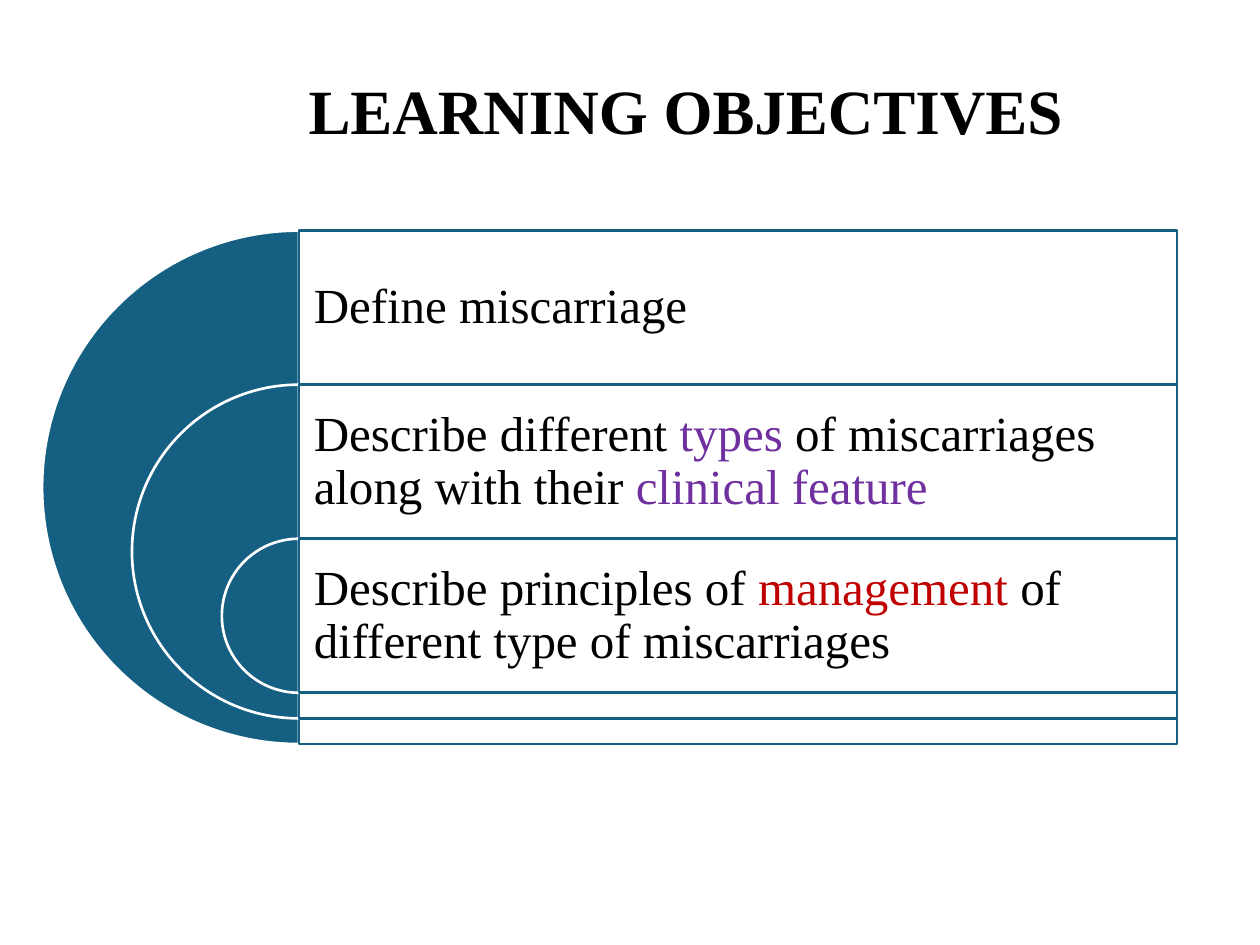
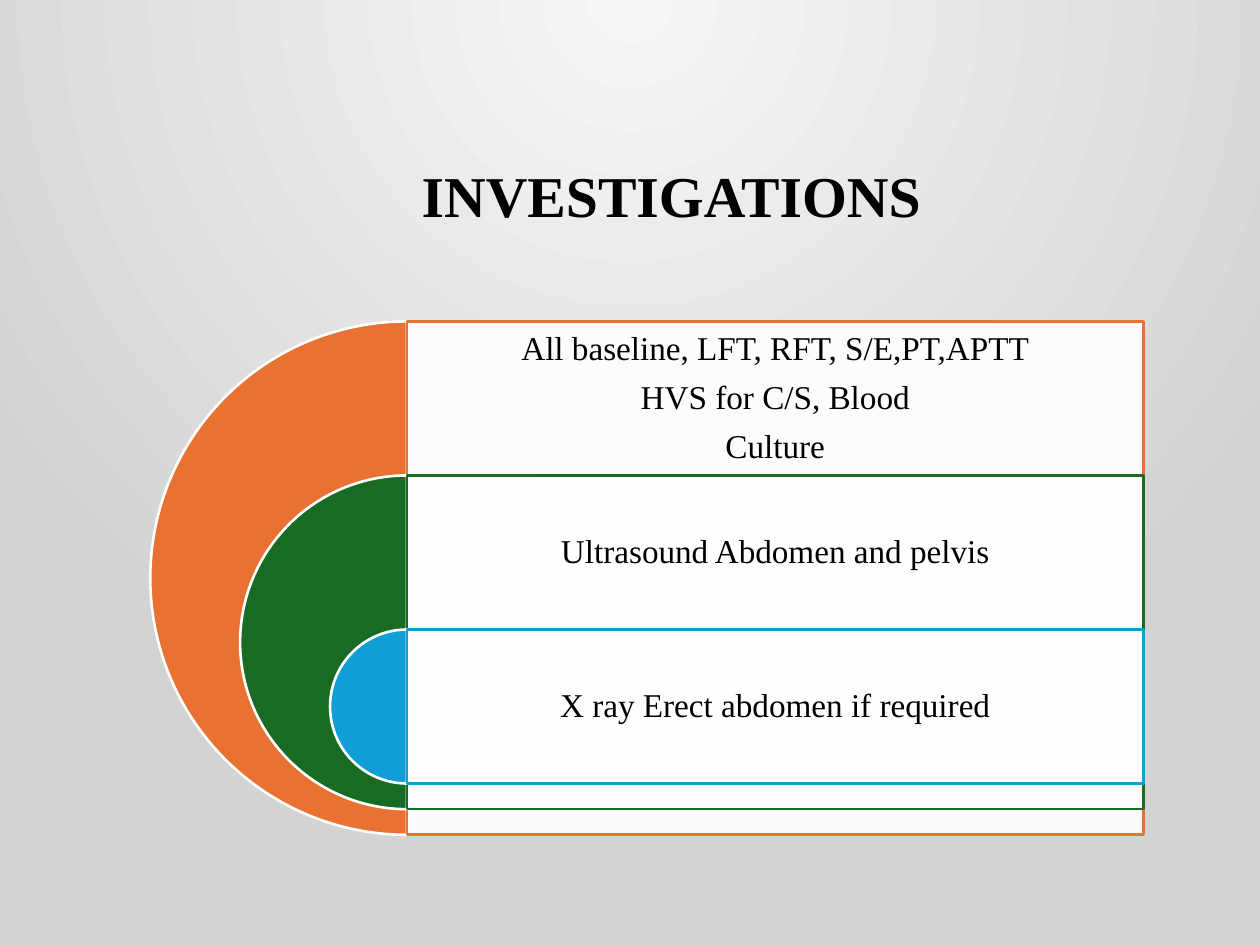
import lxml.etree
import pptx
import pptx.dml.color
import pptx.enum.shapes
import pptx.enum.text
import pptx.oxml.ns
from pptx.util import Cm, Pt

FONT = "Times New Roman"
BLACK, WHITE = "000000", "FFFFFF"
BLUE, ORANGE, GREEN, SKY = "156082", "E97132", "196B24", "0F9ED5"
PURPLE, RED = "7030A0", "C00000"
LEFT = pptx.enum.text.PP_ALIGN.LEFT
CENTER = pptx.enum.text.PP_ALIGN.CENTER
SHAPES = pptx.enum.shapes.MSO_SHAPE

ROW_SHARE = 0.3      # height of a row relative to the outer circle
SHRINK = 0.35        # loss of diameter from one circle to the next


def color(hex_code):
    return pptx.dml.color.RGBColor.from_string(hex_code)


def add_text(slide, box, paragraphs, size, inset=(0, 0, 0, 0), align=LEFT,
             bold=False, line_spacing=0.9, space_after=0):
    """Each paragraph is a list of (text, colour) runs."""
    frame = slide.shapes.add_textbox(*map(Cm, box)).text_frame
    frame.word_wrap = True
    frame.vertical_anchor = pptx.enum.text.MSO_ANCHOR.MIDDLE
    (frame.margin_left, frame.margin_top,
     frame.margin_right, frame.margin_bottom) = map(Cm, inset)
    for index, runs in enumerate(paragraphs):
        paragraph = frame.add_paragraph() if index else frame.paragraphs[0]
        paragraph.alignment = align
        paragraph.line_spacing = line_spacing
        paragraph.space_after = Pt(space_after)
        paragraph.font.name = FONT
        paragraph.font.size = Pt(size)
        paragraph.font.bold = bold
        for text, hex_code in runs:
            run = paragraph.add_run()
            run.text = text
            run.font.color.rgb = color(hex_code)


def add_title(slide, box, text, size, inset, line_spacing):
    add_text(slide, box, [[(text, BLACK)]], size, inset, bold=True,
             line_spacing=line_spacing)


def add_filled(slide, kind, box, fill, line):
    shape = slide.shapes.add_shape(kind, *map(Cm, box))
    shape.shadow.inherit = False
    shape.fill.solid()
    shape.fill.fore_color.rgb = color(fill)
    shape.line.color.rgb = color(line)
    shape.line.width = Pt(1.5)
    return shape


def set_opacity(shape, percent):
    fill = shape.element.spPr.find(pptx.oxml.ns.qn("a:solidFill"))
    lxml.etree.SubElement(fill[0], pptx.oxml.ns.qn("a:alpha"),
                          val=str(percent * 1000))


def add_target_list(slide, box, rows, size, inset, align):
    """Nested half circles, each opening into a row of text to its right."""
    left, top, width, height = box
    center = left + height / 2
    row_height = ROW_SHARE * height
    for index, (hue, paragraphs) in enumerate(rows):
        diameter = height * (1 - SHRINK * index)
        row_top = top + row_height * index
        row_width = left + width - center

        half_circle = add_filled(
            slide, SHAPES.PIE,
            (center - diameter / 2, row_top, diameter, diameter), hue, WHITE)
        # From 90 to 270 degrees, in units of 100000/60000 degrees
        half_circle.adjustments[0] = 54
        half_circle.adjustments[1] = 162

        panel = add_filled(slide, SHAPES.RECTANGLE,
                           (center, row_top, row_width, diameter), WHITE, hue)
        set_opacity(panel, 90)

        add_text(slide, (center, row_top, row_width, row_height), paragraphs,
                 size, (inset,) * 4, align, space_after=0.4 * size)


def set_radial_background(slide, inner, outer):
    fill = slide.background.fill
    fill.gradient()
    for stop, hex_code in zip(fill.gradient_stops, (inner, outer)):
        stop.color.rgb = color(hex_code)
    qn = pptx.oxml.ns.qn
    gradient = slide.element.find(".//" + qn("a:gradFill"))
    linear = gradient.find(qn("a:lin"))
    circle = lxml.etree.Element(qn("a:path"), {"path": "circle"})
    lxml.etree.SubElement(circle, qn("a:fillToRect"),
                          l="43000", t="0", r="43000", b="100000")
    gradient.replace(linear, circle)


def build_objectives(slide):
    add_title(slide, (4.65, 1.4, 20.75, 1.57), "LEARNING OBJECTIVES", 36,
              (1.57, 0.03, 0, 0), 1.0)
    rows = [
        (BLUE, [[("Define miscarriage", BLACK)]]),
        (BLUE, [[("Describe different ", BLACK), ("types ", PURPLE),
                 ("of miscarriages along with their ", BLACK),
                 ("clinical feature", PURPLE)]]),
        (BLUE, [[("Describe principles of ", BLACK), ("management ", RED),
                 ("of different type of miscarriages", BLACK)]]),
    ]
    add_target_list(slide, (0.85, 4.65, 22.88, 10.35), rows, 28, 0.3, LEFT)


def build_investigations(slide):
    set_radial_background(slide, "F7F7F7", "D3D3D3")
    add_title(slide, (8.25, 2.54, 11.63, 2.92), "INVESTIGATIONS", 33,
              (0.25, 0.13, 0.25, 0.13), 0.9)
    rows = [
        (ORANGE, ["All baseline, LFT, RFT, S/E,PT,APTT",
                  "HVS for C/S, Blood", "Culture"]),
        (GREEN, ["Ultrasound Abdomen and pelvis"]),
        (SKY, ["X ray Erect abdomen if required"]),
    ]
    rows = [(hue, [[(line, BLACK)] for line in lines]) for hue, lines in rows]
    add_target_list(slide, (3.03, 6.48, 20.02, 10.35), rows, 19, 0.2, CENTER)


def main():
    presentation = pptx.Presentation()
    presentation.slide_width = Cm(25.4)
    presentation.slide_height = Cm(19.05)
    blank = presentation.slide_layouts[6]
    for build in (build_objectives, build_investigations):
        build(presentation.slides.add_slide(blank))
    presentation.save("out.pptx")


if __name__ == "__main__":
    main()
